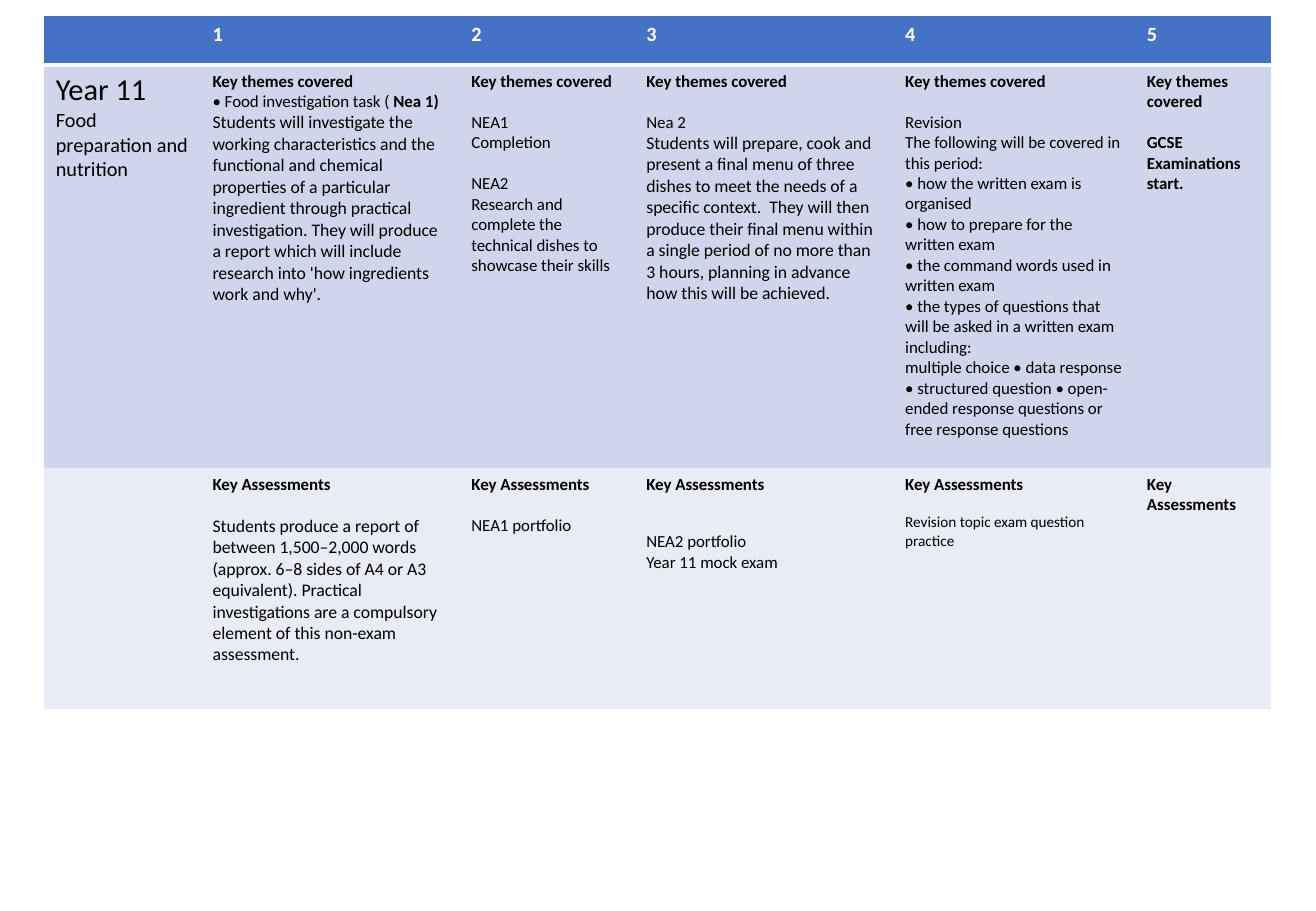
from lxml import etree
from pptx import Presentation
from pptx.dml.color import RGBColor
from pptx.oxml.ns import qn
from pptx.util import Inches, Pt

WHITE = RGBColor(0xFF, 0xFF, 0xFF)
BLACK = RGBColor(0x00, 0x00, 0x00)
ROW_FILLS = [RGBColor(0x44, 0x72, 0xC4), RGBColor(0xCF, 0xD5, 0xEA),
             RGBColor(0xE9, 0xEB, 0xF5)]
FONT = "Calibri"
LINE = 1.22  # line height as a share of the text size

SLIDE_W, SLIDE_H = 10.83, 7.5
LEFT, TOP = 0.36, 0.13
COL_WIDTHS = [1.29, 2.13, 1.44, 2.13, 1.99, 1.13]
ROW_HEIGHTS = [0.4, 3.32, 1.99]
THIN, THICK = 1, 3


def para(text, bold_tail="", size=10, bold=False, color=BLACK, gap=0):
    """Describe a paragraph; gap is the point size of the line left above it."""
    runs = [(text, bold)] + ([(bold_tail, True)] if bold_tail else [])
    return {"runs": runs, "size": size, "color": color, "gap": gap}


def heading(text):
    """Describe the bold heading of a cell."""
    return para(text, bold=True)


def lines(*texts):
    """Describe plain paragraphs, the first one a line below the heading."""
    return [para(t, gap=0 if i else 10) for i, t in enumerate(texts)]


THEMES = heading("Key themes covered\u00a0")
ASSESSMENTS = heading("Key Assessments")

HEADER = [[]] + [[para(str(n), size=12, bold=True, color=WHITE)]
                 for n in range(1, 6)]

THEME_ROW = [
    [para("Year 11", size=18),
     para("Food preparation and nutrition", size=12)],
    [THEMES,
     para("• Food investigation task ( ", bold_tail="Nea 1)"),
     para("Students will investigate the working characteristics and the "
          "functional and chemical properties of a particular ingredient "
          "through practical investigation. They will produce a report which "
          "will include research into 'how ingredients work and why'.",
          size=10.5)],
    [THEMES,
     *lines("NEA1", "Completion"),
     *lines("NEA2", "Research and complete the technical dishes to showcase "
                    "their skills")],
    [THEMES,
     *lines("Nea 2"),
     para("Students will prepare, cook and present a final menu of three "
          "dishes to meet the needs of a specific context.\u00a0 They will "
          "then produce their final menu within a single period of no more "
          "than 3 hours, planning in advance how this will be achieved.",
          size=10.5)],
    [THEMES,
     *lines("Revision\u00a0",
            "The following will be covered in this period:\u00a0",
            "• how the written exam is organised\u00a0",
            "• how to prepare for the written exam\u00a0",
            "• the command words used in written exam\u00a0",
            "• the types of questions that will be asked in a written exam "
            "including:\u00a0",
            "multiple choice • data response • structured question • "
            "open-ended response questions or free response questions")],
    [THEMES, para("GCSE Examinations start.", bold=True, gap=10)],
]

ASSESSMENT_ROW = [
    [],
    [ASSESSMENTS,
     para("Students produce a report of between 1,500–2,000 words (approx. "
          "6–8 sides of A4 or A3 equivalent). Practical investigations are a "
          "compulsory element of this non-exam assessment.",
          size=10.5, gap=10)],
    [ASSESSMENTS, *lines("NEA1 portfolio")],
    [ASSESSMENTS, para("NEA2 portfolio", gap=18), para("Year 11 mock exam")],
    [ASSESSMENTS,
     para("Revision topic exam question practice", size=9, gap=9)],
    [ASSESSMENTS],
]


def write_cell(cell, paragraphs):
    """Fill a cell with the described paragraphs."""
    tf = cell.text_frame
    for i, item in enumerate(paragraphs):
        p = tf.add_paragraph() if i else tf.paragraphs[0]
        if item["gap"]:
            p.space_before = Pt(round(item["gap"] * LINE, 1))
        for text, bold in item["runs"]:
            r = p.add_run()
            r.text = text
            style = {"name": FONT, "size": Pt(item["size"]), "bold": bold}
            for name, value in style.items():
                setattr(r.font, name, value)
            r.font.color.rgb = item["color"]


def set_borders(cell, widths):
    """Draw white borders of the given point widths; zero means no line."""
    tc_pr = cell._tc.get_or_add_tcPr()
    for side, width in widths.items():
        ln = etree.SubElement(tc_pr, qn(f"a:ln{side}"), w=str(Pt(width)))
        if width:
            fill = etree.SubElement(ln, qn("a:solidFill"))
            etree.SubElement(fill, qn("a:srgbClr"), val=str(WHITE))
        else:
            etree.SubElement(ln, qn("a:noFill"))


def border_widths(row, col):
    """Give the outer edge a thin line and the header a thick underline."""
    last_row, last_col = len(ROW_HEIGHTS) - 1, len(COL_WIDTHS) - 1
    return {"L": THIN if col == 0 else 0,
            "R": THIN if col == last_col else 0,
            "T": {0: THIN, 1: THICK}.get(row, 0),
            "B": {0: THICK, last_row: THIN}.get(row, 0)}


def add_plan_table(s, rows):
    """Add the curriculum table and format every cell."""
    table = s.shapes.add_table(
        len(ROW_HEIGHTS), len(COL_WIDTHS), Inches(LEFT), Inches(TOP),
        Inches(sum(COL_WIDTHS)), Inches(sum(ROW_HEIGHTS))).table
    table.first_row = table.horz_banding = False
    for column, width in zip(table.columns, COL_WIDTHS):
        column.width = Inches(width)
    for i, (height, fill) in enumerate(zip(ROW_HEIGHTS, ROW_FILLS)):
        table.rows[i].height = Inches(height)
        for j, paragraphs in enumerate(rows[i]):
            cell = table.cell(i, j)
            set_borders(cell, border_widths(i, j))
            cell.fill.solid()
            cell.fill.fore_color.rgb = fill
            write_cell(cell, paragraphs)


def main():
    """Build the Year 11 curriculum plan slide."""
    prs = Presentation()
    prs.slide_width, prs.slide_height = Inches(SLIDE_W), Inches(SLIDE_H)
    s = prs.slides.add_slide(prs.slide_layouts[6])
    add_plan_table(s, [HEADER, THEME_ROW, ASSESSMENT_ROW])
    prs.save("out.pptx")


main()
